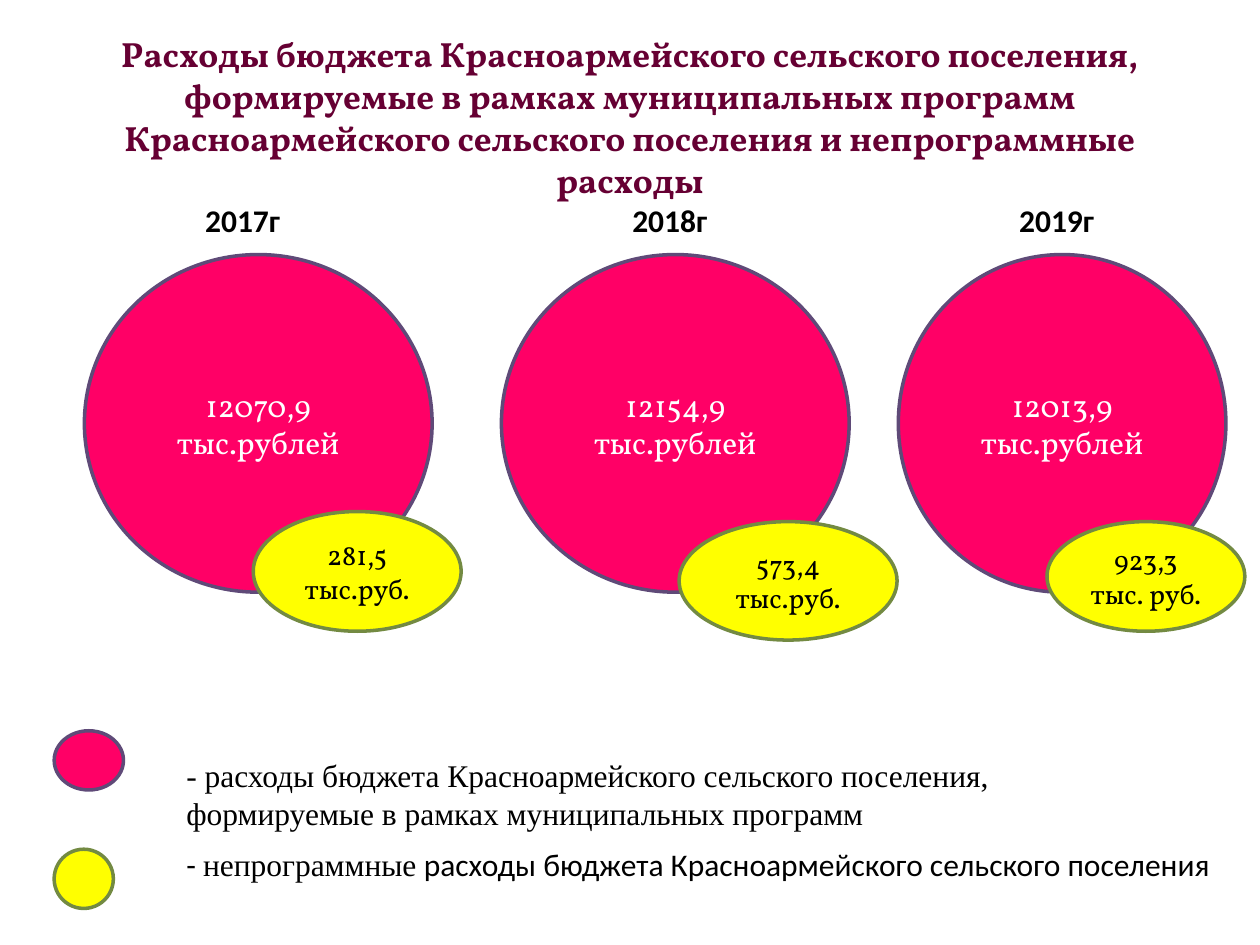
from pptx import Presentation
from pptx.dml.color import RGBColor
from pptx.enum.shapes import MSO_SHAPE
from pptx.enum.text import MSO_ANCHOR, PP_ALIGN
from pptx.util import Inches, Pt

PINK = RGBColor(0xFF, 0x00, 0x66)
PURPLE = RGBColor(0x5F, 0x4A, 0x78)
YELLOW = RGBColor(0xFF, 0xFF, 0x00)
GREEN = RGBColor(0x73, 0x8A, 0x42)
MAROON = RGBColor(0x66, 0x00, 0x33)
WHITE = RGBColor(0xFF, 0xFF, 0xFF)
BLACK = RGBColor(0x00, 0x00, 0x00)

deck = Presentation()
deck.slide_width = Inches(10)
deck.slide_height = Inches(7.5)
COLUMN = deck.slide_width / 100
ROW = deck.slide_height / 75
page = deck.slides.add_slide(deck.slide_layouts[6])


def write(shape, spans, size, color, align=PP_ALIGN.LEFT, anchor=MSO_ANCHOR.TOP, bold=False):
    frame = shape.text_frame
    frame.word_wrap = True
    frame.vertical_anchor = anchor
    para = frame.paragraphs[0]
    para.alignment = align
    for text, font in spans:
        span = para.add_run()
        span.text = text
        span.font.name = font
        span.font.size = Pt(size)
        span.font.bold = bold
        span.font.color.rgb = color


def add_ellipse(left, top, width, height, fill, line):
    ellipse = page.shapes.add_shape(
        MSO_SHAPE.OVAL, int(left * COLUMN), int(top * ROW), int(width * COLUMN), int(height * ROW))
    ellipse.shadow.inherit = False
    ellipse.fill.solid()
    ellipse.fill.fore_color.rgb = fill
    ellipse.line.color.rgb = line
    ellipse.line.width = Pt(2)
    return ellipse


title = page.shapes.add_textbox(int(5 * COLUMN), int(3 * ROW), int(90 * COLUMN), int(12.5 * ROW))
write(title, [("Расходы бюджета Красноармейского сельского поселения, формируемые в рамках "
               "муниципальных программ Красноармейского сельского поселения и непрограммные расходы",
               "Vollkorn")], 20, MAROON, PP_ALIGN.CENTER, MSO_ANCHOR.MIDDLE, True)

program_spending = [
    ("12070,9 тыс.рублей", 6.7, 27.6),
    ("12154,9 тыс.рублей", 39.8, 27.6),
    ("12013,9 тыс.рублей", 71.3, 26),
]
for amount, left, width in program_spending:
    circle = add_ellipse(left, 20.2, width, 26.8, PINK, PURPLE)
    write(circle, [(amount, "Vollkorn")], 18, WHITE, PP_ALIGN.CENTER, MSO_ANCHOR.MIDDLE)

other_spending = [
    ("281,5 тыс.руб.", 20.1, 40.6, 16.5, 9.5),
    ("573,4 тыс.руб.", 53.9, 41.4, 17.3, 9.4),
    ("923,3 тыс. руб.", 83.1, 41.4, 15.7, 8.7),
]
for amount, left, top, width, height in other_spending:
    oval = add_ellipse(left, top, width, height, YELLOW, GREEN)
    write(oval, [(amount, "Vollkorn")], 16, BLACK, PP_ALIGN.CENTER, MSO_ANCHOR.MIDDLE)

add_ellipse(4.3, 58, 5.5, 4.7, PINK, PURPLE)
add_ellipse(4.3, 67.4, 4.7, 4.7, YELLOW, GREEN)

for year, left, width in [("2017г", 15.3, 8.9), ("2018г", 49.2, 9.4), ("2019г", 79.9, 9.1)]:
    box = page.shapes.add_textbox(int(left * COLUMN), int(15.5 * ROW), int(width * COLUMN), int(4 * ROW))
    write(box, [(year, "Calibri")], 18, BLACK, bold=True)

legend = [
    (66.6, 85.1, 4, [("- ", "Calibri"), ("непрограммные", "Times New Roman"),
                     (" расходы бюджета Красноармейского сельского поселения", "Calibri")]),
    (59.5, 79.5, 7.1, [("- расходы бюджета Красноармейского сельского поселения, "
                        "формируемые в рамках муниципальных программ", "Times New Roman")]),
]
for top, width, height, spans in legend:
    box = page.shapes.add_textbox(int(13.8 * COLUMN), int(top * ROW), int(width * COLUMN), int(height * ROW))
    write(box, spans, 18, BLACK)

deck.save("out.pptx")
